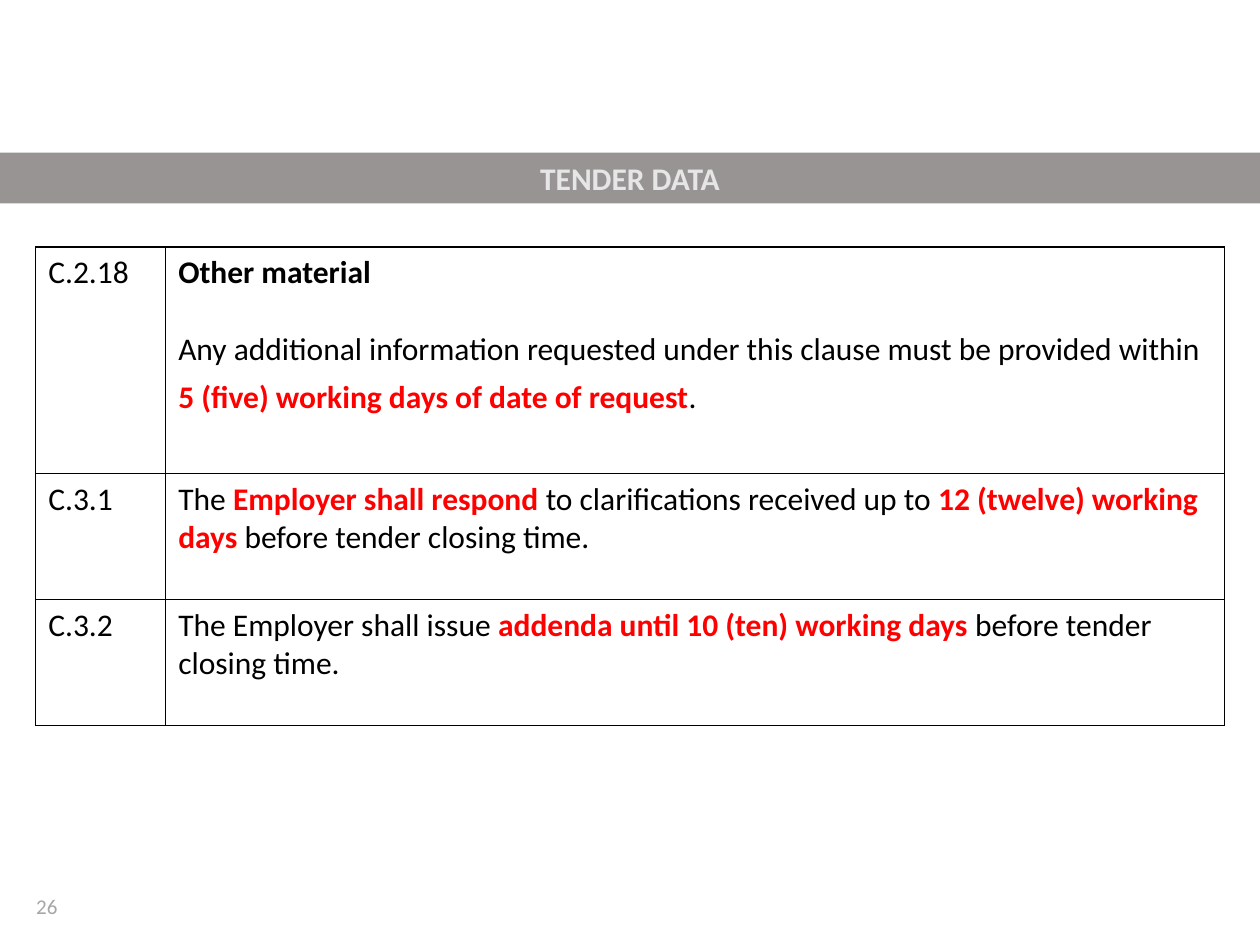
from lxml import etree
from pptx import Presentation
from pptx.dml.color import RGBColor
from pptx.enum.shapes import MSO_SHAPE
from pptx.enum.text import MSO_ANCHOR, PP_ALIGN
from pptx.oxml.ns import qn
from pptx.util import Cm, Pt

COLORS = {
    "text": "000000",
    "highlight": "FF0000",
    "bar": "989494",
    "title": "E7E6E6",
    "number": "A6A6A6",
}


def format_run(run, color, size=18, bold=False):
    run.font.name = "Calibri"
    run.font.size = Pt(size)
    run.font.bold = bold
    run.font.color.rgb = RGBColor.from_string(COLORS[color])


def add_borders(cell):
    properties = cell._tc.get_or_add_tcPr()
    for index, side in enumerate(("lnL", "lnR", "lnT", "lnB")):
        line = etree.Element(qn(f"a:{side}"), w=str(Pt(1)))
        fill = etree.SubElement(line, qn("a:solidFill"))
        etree.SubElement(fill, qn("a:srgbClr"), val=COLORS["text"])
        properties.insert(index, line)


presentation = Presentation()
presentation.slide_width = Cm(25.4)
presentation.slide_height = Cm(19.05)
slide = presentation.slides.add_slide(presentation.slide_layouts[6])

number_box = slide.shapes.add_textbox(Cm(0.48), Cm(17.88), Cm(5.72), Cm(1.02))
number_box.text_frame.word_wrap = True
number_box.text_frame.text = "26"
format_run(number_box.text_frame.paragraphs[0].runs[0], "number", 12)

clauses = [
    ("C.2.18", 4.57, [
        [("Other material", "text", True)],
        [
            ("Any additional information requested under this clause must be provided within ", "text", False),
            ("5 (five) working days of date of request", "highlight", True),
            (".", "text", False),
        ],
    ]),
    ("C.3.1", 2.54, [[
        ("The ", "text", False),
        ("Employer shall respond ", "highlight", True),
        ("to clarifications received up to ", "text", False),
        ("12 (twelve) working days ", "highlight", True),
        ("before tender closing time.", "text", False),
    ]]),
    ("C.3.2", 2.54, [[
        ("The Employer shall issue ", "text", False),
        ("addenda until 10 (ten) working days ", "highlight", True),
        ("before tender closing time.", "text", False),
    ]]),
]

table_frame = slide.shapes.add_table(len(clauses), 2, Cm(0.72), Cm(4.98), Cm(23.96), Cm(9.65))
table = table_frame.table
table.first_row = False
table.horz_banding = False
table.columns[0].width = Cm(2.62)
table.columns[1].width = Cm(21.34)

for row, (clause, height, paragraphs) in enumerate(clauses):
    table.rows[row].height = Cm(height)
    contents = [[[(clause, "text", False)]], paragraphs]
    for column, content in enumerate(contents):
        cell = table.cell(row, column)
        cell.fill.background()
        add_borders(cell)
        for index, parts in enumerate(content):
            if index == 0:
                paragraph = cell.text_frame.paragraphs[0]
            else:
                paragraph = cell.text_frame.add_paragraph()
                paragraph.space_before = Pt(16.5)
                paragraph.line_spacing = 1.25
            for text, color, bold in parts:
                run = paragraph.add_run()
                run.text = text
                format_run(run, color, bold=bold)

title_bar = slide.shapes.add_shape(MSO_SHAPE.RECTANGLE, 0, Cm(3.08), Cm(25.4), Cm(1.02))
title_bar.shadow.inherit = False
title_bar.fill.solid()
title_bar.fill.fore_color.rgb = RGBColor.from_string(COLORS["bar"])
title_bar.line.fill.background()
title_bar.text_frame.vertical_anchor = MSO_ANCHOR.MIDDLE
title_bar.text_frame.text = "TENDER DATA"
title_paragraph = title_bar.text_frame.paragraphs[0]
title_paragraph.alignment = PP_ALIGN.CENTER
format_run(title_paragraph.runs[0], "title", bold=True)

presentation.save("out.pptx")
